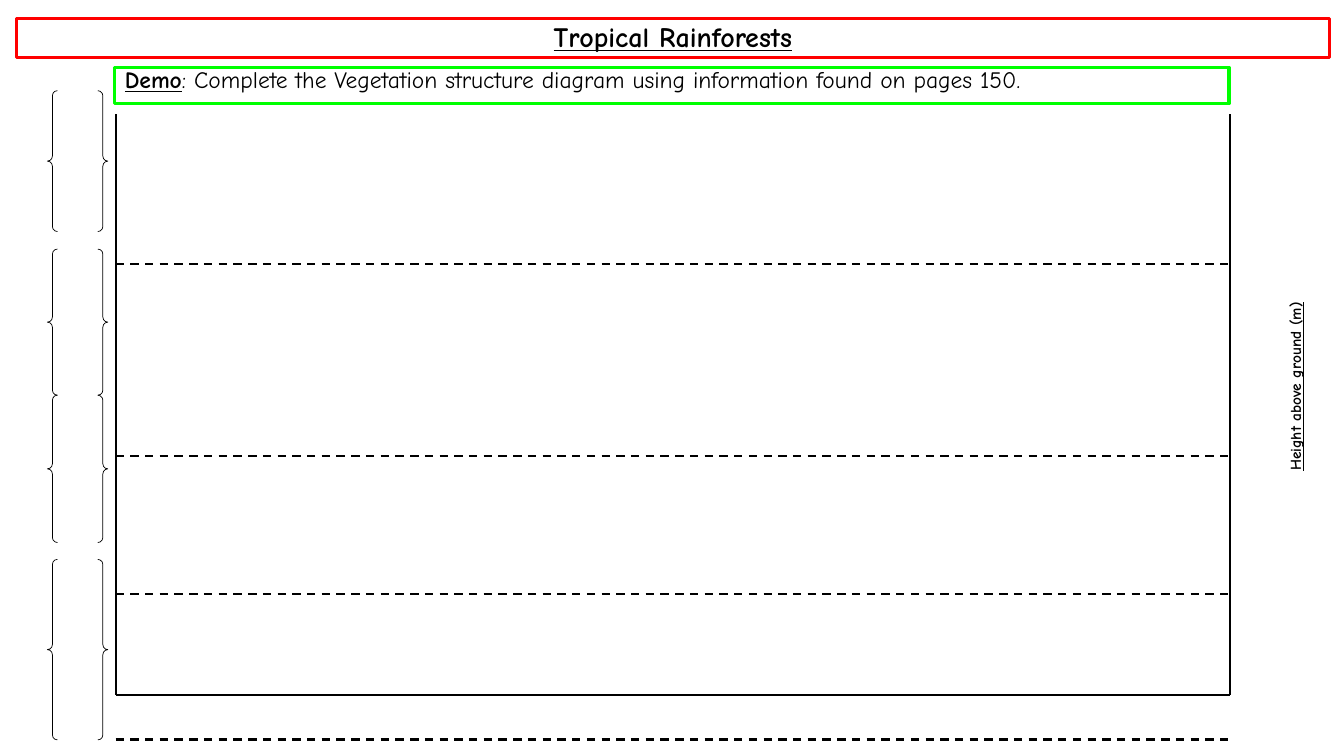
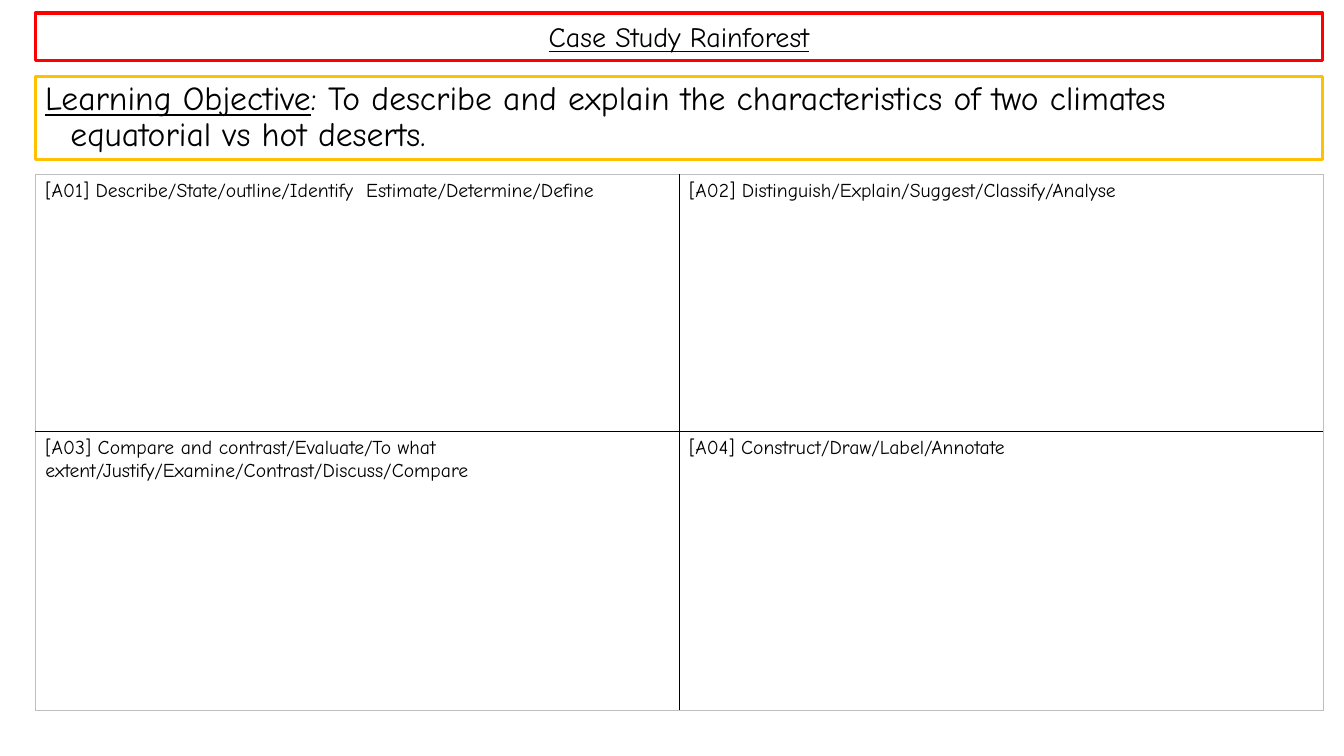
from typing import NamedTuple

from lxml.etree import SubElement
from pptx import Presentation
from pptx.dml.color import RGBColor
from pptx.enum.dml import MSO_LINE
from pptx.enum.shapes import MSO_CONNECTOR, MSO_SHAPE
from pptx.enum.text import MSO_ANCHOR, PP_ALIGN
from pptx.oxml import parse_xml
from pptx.oxml.ns import nsdecls, qn
from pptx.util import Inches, Pt

BLACK = RGBColor(0x00, 0x00, 0x00)
WHITE = RGBColor(0xFF, 0xFF, 0xFF)
RED = RGBColor(0xFF, 0x00, 0x00)
GREEN = RGBColor(0x00, 0xFF, 0x00)
AMBER = RGBColor(0xFF, 0xC0, 0x00)
GREY = RGBColor(0xBF, 0xBF, 0xBF)
FONT = "Comic Neue"
HANGING = Inches(0.25)


class Box(NamedTuple):
    left: int
    top: int
    width: int
    height: int

    def point(self, x, y):
        """Point at percentages of this box."""
        return (round(self.left + self.width * x / 100),
                round(self.top + self.height * y / 100))

    def inner(self, x, y, width, height):
        """Inner box at percentages of this box."""
        return Box(*self.point(x, y), round(self.width * width / 100),
                   round(self.height * height / 100))


SLIDE = Box(0, 0, Inches(13.33), Inches(7.5))


# Shared pieces
def add_span(para, text, size, bold=False, underline=False):
    span = para.add_run()
    span.text = text
    font = span.font
    font.name, font.size, font.color.rgb = FONT, Pt(size), BLACK
    font.bold, font.underline = bold, underline


def add_panel(page, box, border=None, fill=None, anchor=MSO_ANCHOR.TOP,
              align=PP_ALIGN.LEFT, spacing=1.0):
    """Draw a framed rectangle and return it with its first paragraph."""
    panel = page.shapes.add_shape(MSO_SHAPE.RECTANGLE, *box)
    panel.shadow.inherit = False
    if fill is None:
        panel.fill.background()
    else:
        panel.fill.solid()
        panel.fill.fore_color.rgb = fill
    if border is None:
        panel.line.fill.background()
    else:
        panel.line.color.rgb = border
        panel.line.width = Pt(2.25)
    frame = panel.text_frame
    frame.word_wrap = True
    frame.vertical_anchor = anchor
    para = frame.paragraphs[0]
    para.alignment, para.line_spacing = align, spacing
    return panel, para


def add_title(page, box, text, bold=False, **style):
    _, para = add_panel(page, box, RED, align=PP_ALIGN.CENTER, **style)
    add_span(para, text, 20, bold, underline=True)


def add_task(page, box, border, label, text, size, spacing, bold=False):
    """Underlined label and its instruction, with a hanging indent."""
    _, para = add_panel(page, box, border, spacing=spacing)
    para.space_before = Pt(10)
    properties = para._p.get_or_add_pPr()
    properties.set("marL", str(HANGING))
    properties.set("indent", str(-HANGING))
    add_span(para, label, size, bold, underline=True)
    add_span(para, text, size)


def add_line(page, start, end, dashed=False):
    line = page.shapes.add_connector(MSO_CONNECTOR.STRAIGHT, *start, *end)
    line.line.color.rgb = BLACK
    line.line.width = Pt(1.5)
    if dashed:
        line.line.dash_style = MSO_LINE.DASH
    SubElement(line._element.spPr, qn("a:effectLst"))


# Vegetation diagram
def add_diagram(page, box):
    for x in (0, 100):
        add_line(page, box.point(x, 0), box.point(x, 100))
    add_line(page, box.point(0, 100), box.point(100, 100))
    for y in (25.8, 58.9, 82.6, 107.7):
        add_line(page, box.point(0, y), box.point(100, y), dashed=True)


def add_layer_braces(page, box):
    for top, height in ((0, 21.7), (24.4, 22.5), (46.9, 22.7), (72.2, 27.8)):
        brace = page.shapes.add_shape(MSO_SHAPE.DOUBLE_BRACE,
                                      *box.inner(0, top, 100, height))
        brace.shadow.inherit = False
        brace.fill.background()
        brace.line.color.rgb = BLACK
        brace.line.width = Pt(0.5)


def add_axis_label(page, box):
    label, para = add_panel(page, box, fill=WHITE, anchor=MSO_ANCHOR.BOTTOM,
                            align=PP_ALIGN.CENTER, spacing=0.9)
    label.rotation = 270
    add_span(para, "Height above ground (m)", 11, bold=True, underline=True)


# Command word table
def set_borders(cell, inner_sides):
    """Black rules inside the table, a fine grey frame around it."""
    properties = cell._tc.get_or_add_tcPr()
    for index, side in enumerate("LRTB"):
        points, color = (1, BLACK) if side in inner_sides else (0.25, GREY)
        properties.insert(index, parse_xml(
            f'<a:ln{side} {nsdecls("a")} w="{Pt(points)}"><a:solidFill>'
            f'<a:srgbClr val="{color}"/></a:solidFill></a:ln{side}>'))


def add_command_table(page, box, texts):
    table = page.shapes.add_table(2, 2, *box).table
    table.first_row = table.horz_banding = False
    for column in table.columns:
        column.width = box.width // 2
    for row, share in zip(table.rows, (48, 52)):
        row.height = box.height * share // 100
    for index, text in enumerate(texts):
        row, column = divmod(index, 2)
        cell = table.cell(row, column)
        cell.fill.background()
        set_borders(cell, "RL"[column] + "BT"[row])
        add_span(cell.text_frame.paragraphs[0], text, 14)


# Slides
def build_vegetation(page, area):
    add_title(page, area.inner(1.2, 2.4, 97.75, 5.2), "Tropical Rainforests",
              bold=True, fill=WHITE, anchor=MSO_ANCHOR.BOTTOM, spacing=0.8)
    add_diagram(page, area.inner(8.6, 15.1, 82.9, 76.8))
    add_layer_braces(page, area.inner(3.53, 12, 4.5, 85.87))
    add_axis_label(page, area.inner(84.32, 48.53, 23.26, 5.2))
    add_task(page, area.inner(8.55, 8.93, 82.9, 4.8), GREEN, "Demo",
             ": Complete the Vegetation structure diagram using information "
             "found on pages 150.", 16.8, 0.7, bold=True)


def build_case_study(page, area):
    add_title(page, area.inner(2.63, 1.73, 95.8, 6.27),
              "Case Study Rainforest", anchor=MSO_ANCHOR.MIDDLE)
    add_command_table(page, area.inner(2.63, 23.07, 95.8, 70.93), (
        "[A01] Describe/State/outline/Identify  Estimate/Determine/Define",
        "[A02] Distinguish/Explain/Suggest/Classify/Analyse",
        "[A03] Compare and contrast/Evaluate/To what "
        "extent/Justify/Examine/Contrast/Discuss/Compare",
        "[A04] Construct/Draw/Label/Annotate"))
    add_task(page, area.inner(2.63, 10.13, 95.8, 10.93), AMBER,
             "Learning Objective",
             ": To describe and explain the characteristics of two climates "
             "equatorial vs hot deserts.", 24, 0.9)


def main():
    deck = Presentation()
    deck.slide_width, deck.slide_height = SLIDE.width, SLIDE.height
    for build in (build_vegetation, build_case_study):
        build(deck.slides.add_slide(deck.slide_layouts[6]), SLIDE)
    deck.save("out.pptx")


if __name__ == "__main__":
    main()
